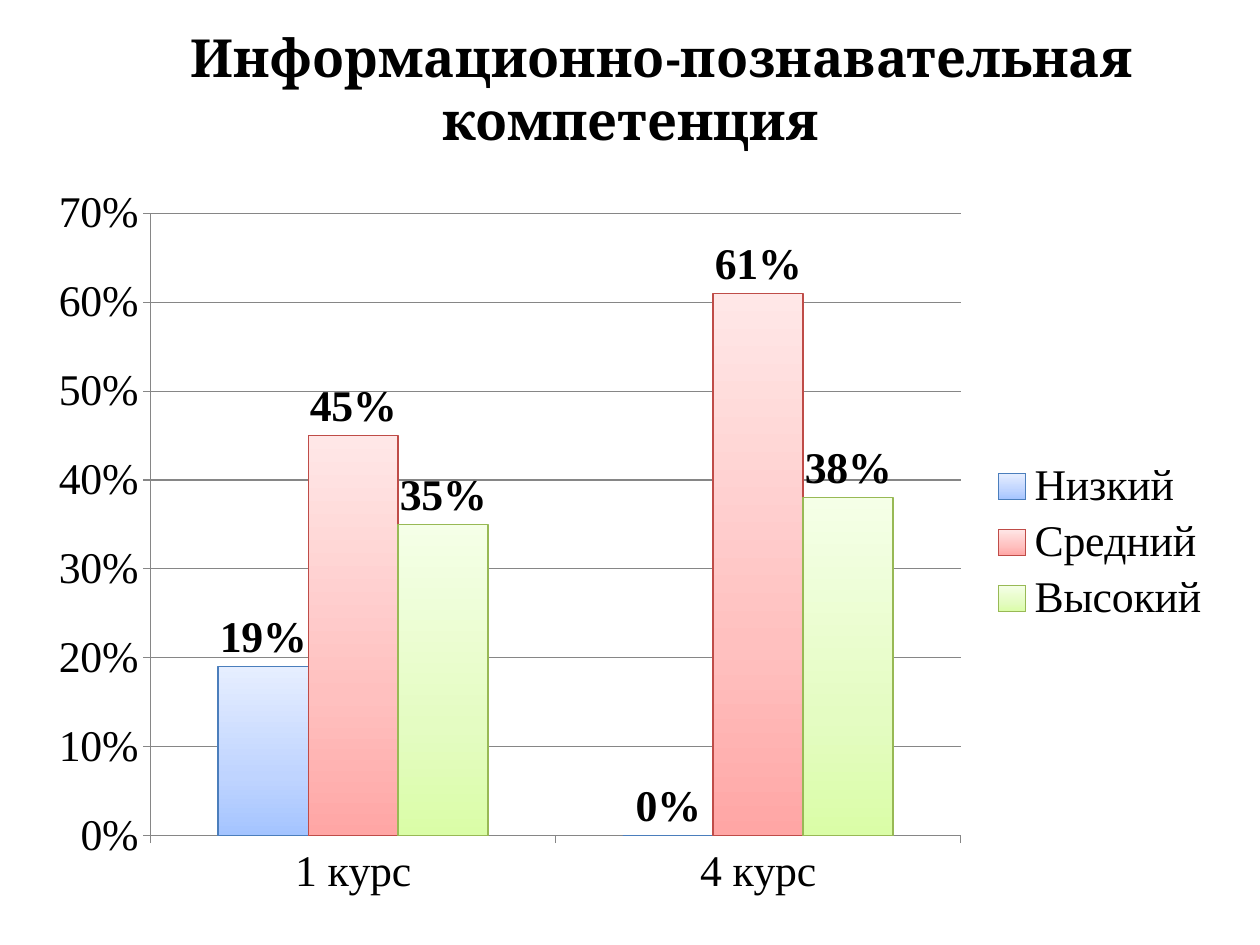
from lxml.etree import SubElement
from pptx import Presentation
from pptx.chart.data import CategoryChartData
from pptx.dml.color import RGBColor
from pptx.enum.chart import XL_CHART_TYPE as ChartType
from pptx.enum.chart import XL_LABEL_POSITION as LabelPosition
from pptx.enum.chart import XL_LEGEND_POSITION as LegendPosition
from pptx.enum.chart import XL_TICK_MARK as TickMark
from pptx.enum.text import MSO_ANCHOR, MSO_AUTO_SIZE, PP_ALIGN
from pptx.oxml import parse_xml
from pptx.oxml.ns import nsdecls, qn
from pptx.util import Pt

EMU_PER_PX = 914400 / 126
SLIDE_SIZE = (1260, 945)
TITLE_BOX = (35, 19, 1191, 140)
CHART_BOX = (35, 175, 1191, 735)

BLACK = RGBColor(0x00, 0x00, 0x00)
WHITE = RGBColor(0xFF, 0xFF, 0xFF)
GRAY = RGBColor(0x86, 0x86, 0x86)
BLUE = RGBColor(0x4B, 0x7E, 0xBC)
RED = RGBColor(0xBF, 0x4C, 0x48)
GREEN = RGBColor(0x98, 0xB9, 0x55)

TITLE_LINES = ("\tИнформационно-познавательная", "компетенция")
TITLE_FONT = {"name": "Cambria", "size": Pt(30), "bold": True}
CHART_FONT = {"name": "Times New Roman", "size": Pt(25), "bold": False}
LABEL_FONT = {**CHART_FONT, "bold": True}

CATEGORIES = ("1 курс", "4 курс")
GRADIENT_POSITIONS = (0, 35, 100)
# name, values, outline, gradient from the foot of the column to its top
LEVELS = (
    ("Низкий", (0.19, 0), BLUE, ("A4C4FF", "BFD4FF", "E6EEFF")),
    ("Средний", (0.45, 0.61), RED, ("FFA6A5", "FFC0BF", "FFE7E7")),
    ("Высокий", (0.35, 0.38), GREEN, ("DAFDA7", "E4FCC2", "F5FFE7")),
)


def px(length):
    return round(length * EMU_PER_PX)


def set_attributes(target, values):
    for name, value in values.items():
        setattr(target, name, value)


def format_font(font, values):
    set_attributes(font, values)
    font.color.rgb = BLACK


def format_line(line, color):
    line.color.rgb = color
    line.width = Pt(0.75)


def add_title(slide):
    title = slide.shapes.title
    box = map(px, TITLE_BOX)
    set_attributes(title, dict(zip(("left", "top", "width", "height"), box)))
    title.fill.solid()
    title.fill.fore_color.rgb = WHITE
    color = title.fill._xPr.find(".//" + qn("a:srgbClr"))
    SubElement(color, qn("a:alpha"), val="70000")
    frame = title.text_frame
    set_attributes(frame, {
        "word_wrap": True,
        "auto_size": MSO_AUTO_SIZE.SHAPE_TO_FIT_TEXT,
        "vertical_anchor": MSO_ANCHOR.TOP,
    })
    frame.text = "\n".join(TITLE_LINES)
    for paragraph in frame.paragraphs:
        paragraph.alignment = PP_ALIGN.CENTER
        format_font(paragraph.runs[0].font, TITLE_FONT)


def fill_chart_area(chart):
    """Give the chart a half-transparent white ground without an outline."""
    properties = parse_xml(
        f'<c:spPr {nsdecls("c", "a")}><a:solidFill><a:srgbClr val="{WHITE}">'
        '<a:alpha val="50000"/></a:srgbClr></a:solidFill>'
        '<a:ln><a:noFill/></a:ln></c:spPr>')
    chart._chartSpace.find(qn("c:chart")).addnext(properties)


def fill_gradient(series, colors):
    stops = "".join(
        f'<a:gs pos="{position * 1000}"><a:srgbClr val="{color}"/></a:gs>'
        for position, color in zip(GRADIENT_POSITIONS, colors))
    gradient = parse_xml(
        f'<a:gradFill {nsdecls("a")} rotWithShape="1"><a:gsLst>{stops}</a:gsLst>'
        '<a:lin ang="16200000" scaled="1"/></a:gradFill>')
    series._element.get_or_add_spPr().insert(0, gradient)


def format_series(series, outline, colors):
    series.invert_if_negative = False
    fill_gradient(series, colors)
    format_line(series.format.line, outline)
    labels = series.data_labels
    set_attributes(labels, {
        "show_value": True,
        "number_format": "0%",
        "number_format_is_linked": False,
        "position": LabelPosition.OUTSIDE_END,
    })
    format_font(labels.font, LABEL_FONT)


def format_axes(chart):
    for axis in (chart.category_axis, chart.value_axis):
        axis.major_tick_mark = TickMark.OUTSIDE
        format_line(axis.format.line, GRAY)
    value_axis = chart.value_axis
    set_attributes(value_axis, {
        "minimum_scale": 0,
        "maximum_scale": 0.7,
        "major_unit": 0.1,
        "has_major_gridlines": True,
    })
    format_line(value_axis.major_gridlines.format.line, GRAY)
    set_attributes(value_axis.tick_labels, {
        "number_format": "0%", "number_format_is_linked": False})


def add_level_chart(slide):
    data = CategoryChartData(number_format="0%")
    data.categories = CATEGORIES
    for name, values, _, _ in LEVELS:
        data.add_series(name, values)
    chart = slide.shapes.add_chart(
        ChartType.COLUMN_CLUSTERED, *map(px, CHART_BOX), data).chart
    format_font(chart.font, CHART_FONT)
    fill_chart_area(chart)
    set_attributes(chart, {"has_title": False, "has_legend": True})
    set_attributes(chart.legend, {
        "position": LegendPosition.RIGHT, "include_in_layout": False})
    format_axes(chart)
    plot = chart.plots[0]
    set_attributes(plot, {"gap_width": 150, "vary_by_categories": False})
    for series, (_, _, outline, colors) in zip(plot.series, LEVELS):
        format_series(series, outline, colors)


def main():
    presentation = Presentation()
    presentation.slide_width, presentation.slide_height = map(px, SLIDE_SIZE)
    slide = presentation.slides.add_slide(presentation.slide_layouts[5])
    add_title(slide)
    add_level_chart(slide)
    presentation.save("out.pptx")


if __name__ == "__main__":
    main()
